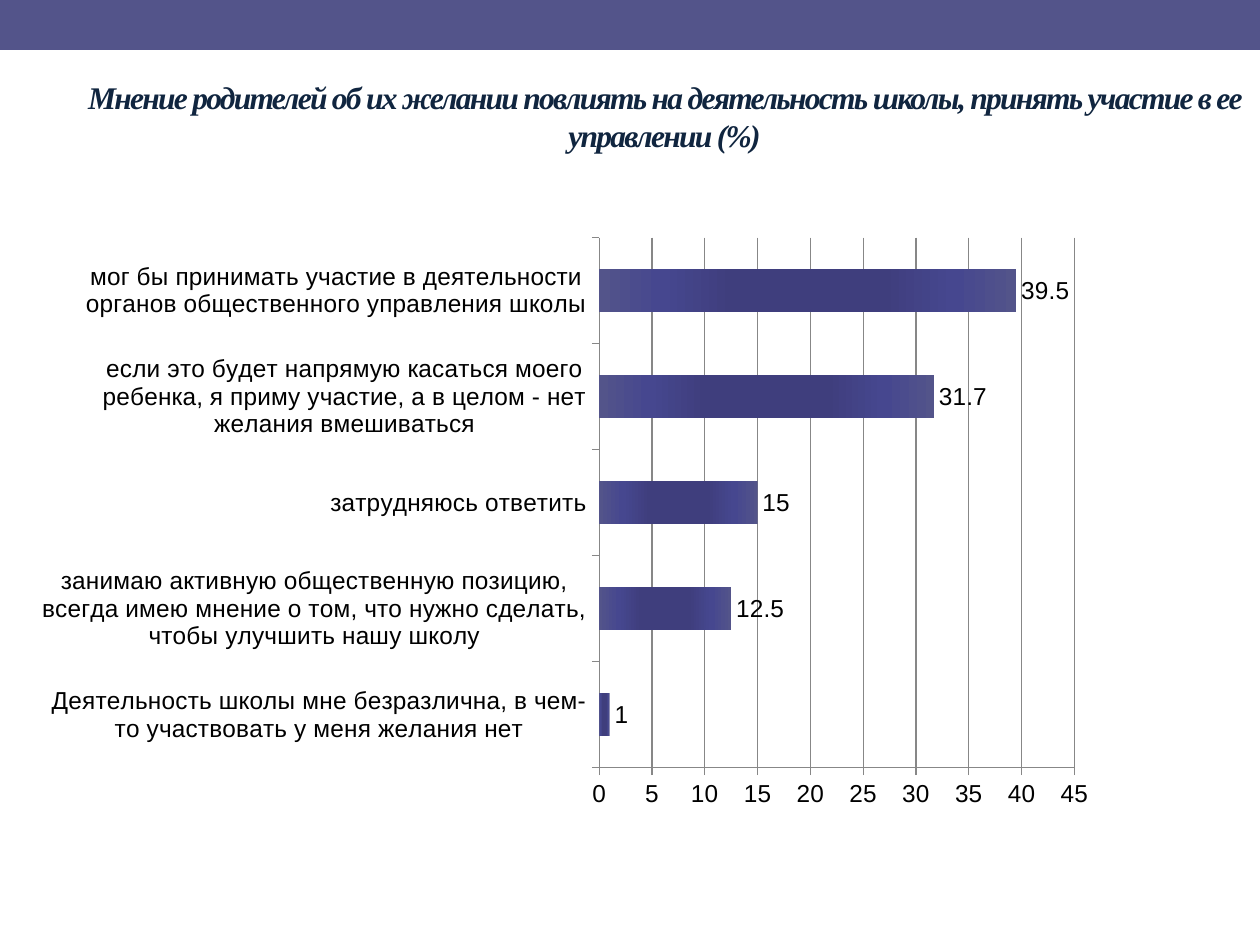
from lxml import etree
from pptx import Presentation
from pptx.chart.data import CategoryChartData
from pptx.dml.color import RGBColor
from pptx.enum.chart import XL_CHART_TYPE, XL_LABEL_POSITION, XL_TICK_MARK
from pptx.enum.shapes import MSO_SHAPE
from pptx.enum.text import MSO_ANCHOR, PP_ALIGN
from pptx.oxml import parse_xml
from pptx.oxml.ns import nsdecls, qn
from pptx.util import Pt

PX = 914400 // 126  # EMU per pixel
WHITE = RGBColor(0xFF, 0xFF, 0xFF)
BLACK = RGBColor(0, 0, 0)
PURPLE = RGBColor(0x53, 0x54, 0x8A)
VIOLET = RGBColor(0x46, 0x47, 0x8F)
INDIGO = RGBColor(0x3F, 0x3E, 0x7D)
NAVY = RGBColor(0x10, 0x25, 0x3F)
GREY = RGBColor(0x87, 0x87, 0x87)

TITLE = ("Мнение родителей об их желании повлиять на деятельность школы, "
         "принять участие в ее управлении (%)")
ANSWERS = [
    ("Деятельность школы мне безразлична, в чем-то участвовать у меня желания нет", 1),
    ("занимаю активную общественную позицию, всегда имею мнение о том, "
     "что нужно сделать, чтобы улучшить нашу школу", 12.5),
    ("затрудняюсь ответить", 15),
    ("если это будет напрямую касаться моего ребенка, я приму участие, "
     "а в целом - нет желания вмешиваться", 31.7),
    ("мог бы принимать участие в деятельности органов общественного "
     "управления школы", 39.5),
]
BAR_STOPS = [(0, PURPLE), (15, VIOLET), (32, INDIGO),
             (68, INDIGO), (85, VIOLET), (100, PURPLE)]
PLOT_LAYOUT = {"x": 0.466, "y": 0.024, "w": 0.403, "h": 0.817}


def px(*lengths):
    return [length * PX for length in lengths]


def add_band(page, left, top, width, height):
    band = page.shapes.add_shape(MSO_SHAPE.RECTANGLE, *px(left, top, width, height))
    band.shadow.inherit = False
    band.fill.solid()
    band.fill.fore_color.rgb = PURPLE
    band.line.fill.background()


def add_title(page, text, left, top, width, height):
    box = page.shapes.add_textbox(*px(left, top, width, height))
    frame = box.text_frame
    frame.word_wrap = True
    frame.vertical_anchor = MSO_ANCHOR.MIDDLE
    frame.text = text
    para = frame.paragraphs[0]
    para.alignment = PP_ALIGN.CENTER
    span = para.runs[0]
    span.font.name = "Times New Roman"
    span.font.size = Pt(18)
    span.font.bold = span.font.italic = True
    span.font.color.rgb = NAVY
    span.font._element.set("spc", "-100")


def set_plot_layout(chart):
    plot_area = chart._chartSpace.chart.plotArea
    for old in plot_area.findall(qn("c:layout")):
        plot_area.remove(old)
    layout = parse_xml(f"<c:layout {nsdecls('c')}><c:manualLayout/></c:layout>")
    settings = {"layoutTarget": "inner", "xMode": "edge", "yMode": "edge", **PLOT_LAYOUT}
    for name, value in settings.items():
        etree.SubElement(layout[0], qn(f"c:{name}")).set("val", str(value))
    plot_area.insert(0, layout)


def fill_bars(series):
    series.format.fill.gradient()
    series.format.fill.gradient_angle = 0
    stops = series.format.fill._fill._gradFill.find(qn("a:gsLst"))
    for old in list(stops):
        stops.remove(old)
    for percent, color in BAR_STOPS:
        stop = etree.SubElement(stops, qn("a:gs"), pos=str(percent * 1000))
        etree.SubElement(stop, qn("a:srgbClr"), val=str(color))


def style_axis(axis):
    axis.major_tick_mark = XL_TICK_MARK.OUTSIDE
    axis.minor_tick_mark = XL_TICK_MARK.NONE
    axis.format.line.color.rgb = GREY
    axis.format.line.width = Pt(0.75)


def add_bar_chart(page, answers, left, top, width, height):
    data = CategoryChartData()
    data.categories = [answer for answer, _ in answers]
    data.add_series("Series 1", [value for _, value in answers])
    chart = page.shapes.add_chart(
        XL_CHART_TYPE.BAR_CLUSTERED, *px(left, top, width, height), data).chart
    chart.has_legend = False
    chart.has_title = False
    chart.font.name = "Arial"
    chart.font.size = Pt(14)
    chart.font.color.rgb = BLACK
    set_plot_layout(chart)

    # Axes and gridlines
    style_axis(chart.category_axis)
    values = chart.value_axis
    style_axis(values)
    values.minimum_scale, values.maximum_scale, values.major_unit = 0, 45, 5
    values.has_major_gridlines = True
    values.major_gridlines.format.line.color.rgb = GREY
    values.major_gridlines.format.line.width = Pt(0.75)

    # Bars and value labels
    plot = chart.plots[0]
    plot.gap_width = 150
    plot.vary_by_categories = False
    fill_bars(plot.series[0])
    plot.has_data_labels = True
    plot.data_labels.show_value = True
    plot.data_labels.position = XL_LABEL_POSITION.OUTSIDE_END


def main():
    deck = Presentation()
    deck.slide_width, deck.slide_height = px(1260, 945)
    page = deck.slides.add_slide(deck.slide_layouts[6])
    page.background.fill.solid()
    page.background.fill.fore_color.rgb = WHITE
    add_band(page, 0, 0, 1260, 50)
    add_title(page, TITLE, 74, 66, 1181, 100)
    add_bar_chart(page, ANSWERS, 42, 222, 1187, 649)
    deck.save("out.pptx")


if __name__ == "__main__":
    main()
